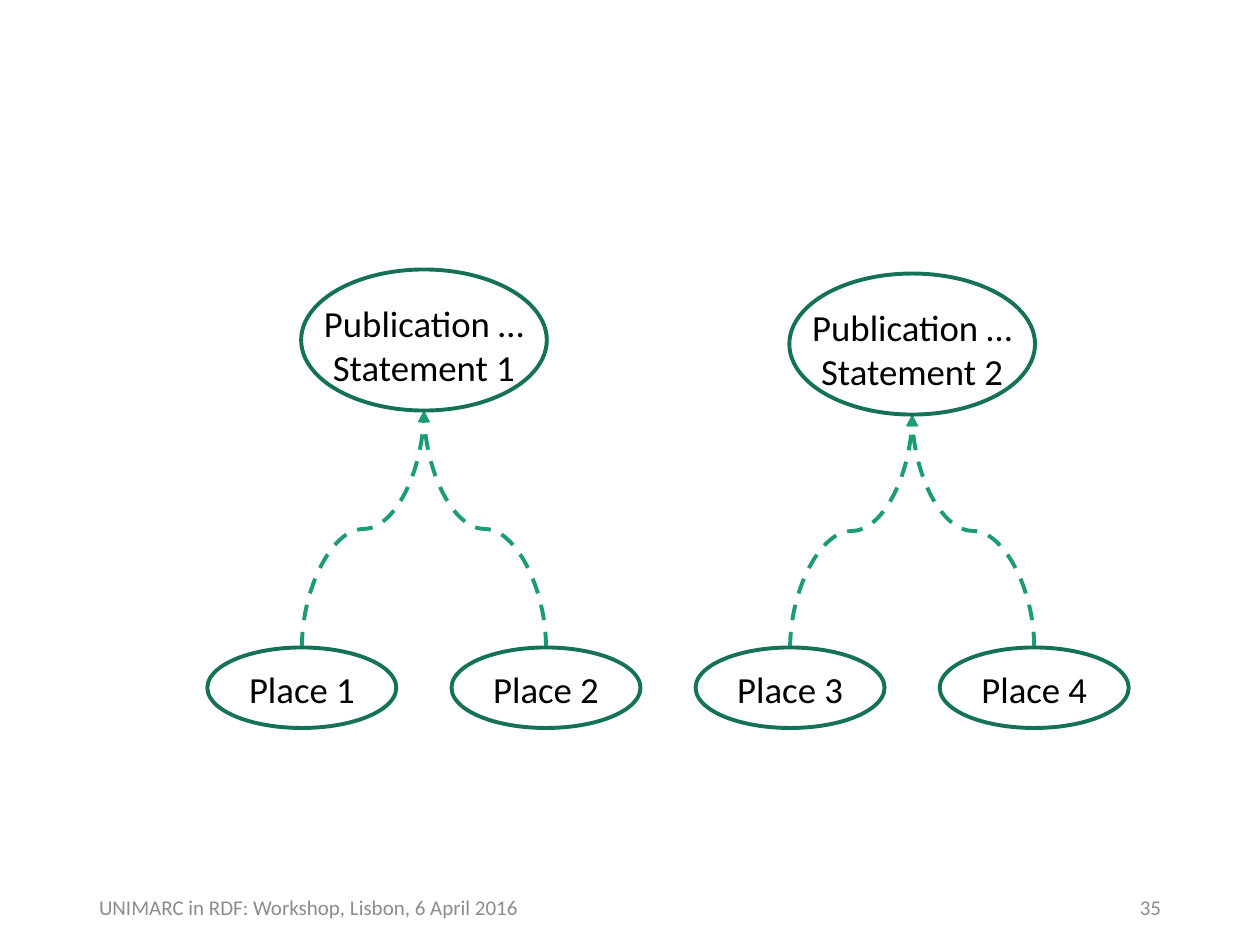
from dataclasses import dataclass

from lxml import etree
from pptx import Presentation
from pptx.dml.color import RGBColor
from pptx.enum.dml import MSO_LINE
from pptx.enum.shapes import MSO_CONNECTOR, MSO_SHAPE
from pptx.enum.text import MSO_ANCHOR, MSO_AUTO_SIZE, PP_ALIGN
from pptx.oxml.ns import qn
from pptx.util import Pt

OVAL = MSO_SHAPE.OVAL
CURVE = MSO_CONNECTOR.CURVE
DASH = MSO_LINE.DASH
TOP, BOTTOM = MSO_ANCHOR.TOP, MSO_ANCHOR.BOTTOM
LEFT, CENTER, RIGHT = PP_ALIGN.LEFT, PP_ALIGN.CENTER, PP_ALIGN.RIGHT
FIT = MSO_AUTO_SIZE.SHAPE_TO_FIT_TEXT


@dataclass(frozen=True)
class Theme:
    font: str = "Calibri"
    text: RGBColor = RGBColor(0x00, 0x00, 0x00)
    muted: RGBColor = RGBColor(0x8C, 0x8C, 0x8C)
    outline: RGBColor = RGBColor(0x15, 0x72, 0x59)
    link: RGBColor = RGBColor(0x1D, 0x9A, 0x78)
    label_size: float = 21
    footer_size: float = 12
    line_width: float = 2.25


THEME = Theme()
PLACE_W, PLACE_H = 108, 46
STATEMENT_W, STATEMENT_H = 140.4, 80.6
PITCH = 139.5


def add_text(shapes, box, text, size, color, align, anchor=TOP):
    sp = shapes.add_textbox(*map(Pt, box))
    tf = sp.text_frame
    tf.word_wrap = True
    tf.vertical_anchor = anchor
    tf.text = text
    for p in tf.paragraphs:
        p.alignment = align
        for r in p.runs:
            r.font.name = THEME.font
            r.font.size = Pt(size)
            r.font.color.rgb = color
    return tf


def add_node(slide, box, label, label_box):
    x, y, w, h = box
    dx, dy, label_w, label_h = label_box
    shapes = slide.shapes.add_group_shape().shapes
    tf = add_text(shapes, (x + dx, y + dy, label_w, label_h), label,
                  THEME.label_size, THEME.text, CENTER)
    tf.word_wrap = False
    tf.auto_size = FIT
    sp = shapes.add_shape(OVAL, *map(Pt, box))
    sp.shadow.inherit = False
    sp.fill.background()
    sp.line.color.rgb = THEME.outline
    sp.line.width = Pt(THEME.line_width)


def add_link(slide, x1, y1, x2, y2):
    cx, cy = (x1 + x2) / 2, (y1 + y2) / 2
    half_run, half_rise = (x2 - x1) / 2, (y1 - y2) / 2
    cxn = slide.shapes.add_connector(
        CURVE, Pt(cx - half_rise), Pt(cy - half_run),
        Pt(cx + half_rise), Pt(cy + half_run))
    cxn.line.color.rgb = THEME.link
    cxn.line.width = Pt(THEME.line_width)
    cxn.line.dash_style = DASH
    sp_pr = cxn._element.spPr
    sp_pr.find(qn("a:xfrm")).set("rot", str(270 * 60000))
    etree.SubElement(sp_pr.find(qn("a:ln")), qn("a:tailEnd"), type="triangle")
    etree.SubElement(sp_pr, qn("a:effectLst"))


def add_statement_tree(slide, box, number):
    x, y, w, h = box
    mid = x + (PLACE_W + PITCH) / 2
    place_y = y + h - PLACE_H
    for i in range(2):
        place_x = x + i * PITCH
        add_link(slide, place_x + PLACE_W / 2, place_y, mid, y + STATEMENT_H)
        add_node(slide, (place_x, place_y, PLACE_W, PLACE_H),
                 f"Place {2 * number - 1 + i}", (16.2, 7.2, 75.6, 32.4))
    add_node(slide, (mid - STATEMENT_W / 2, y, STATEMENT_W, STATEMENT_H),
             f"Publication …\nStatement {number}", (5, 14.4, 130.4, 58.3))


def add_footer(slide, box):
    x, y, w, h = box
    page_w = 162
    add_text(slide.shapes, (x, y, 289.5, h),
             "UNIMARC in RDF: Workshop, Lisbon, 6 April 2016",
             THEME.footer_size, THEME.muted, LEFT, BOTTOM)
    add_text(slide.shapes, (x + w - page_w, y, page_w, h), "35",
             THEME.footer_size, THEME.muted, RIGHT, BOTTOM)


def main():
    prs = Presentation()
    prs.slide_width, prs.slide_height = Pt(720), Pt(540)
    slide = prs.slides.add_slide(prs.slide_layouts[6])
    bottom = 416
    for number, top in enumerate((154, 156.3), 1):
        left = 118.5 + (number - 1) * 2 * PITCH
        add_statement_tree(
            slide, (left, top, PITCH + PLACE_W, bottom - top), number)
    add_footer(slide, (49.5, 500.4, 621, 28.8))
    prs.save("out.pptx")


if __name__ == "__main__":
    main()
